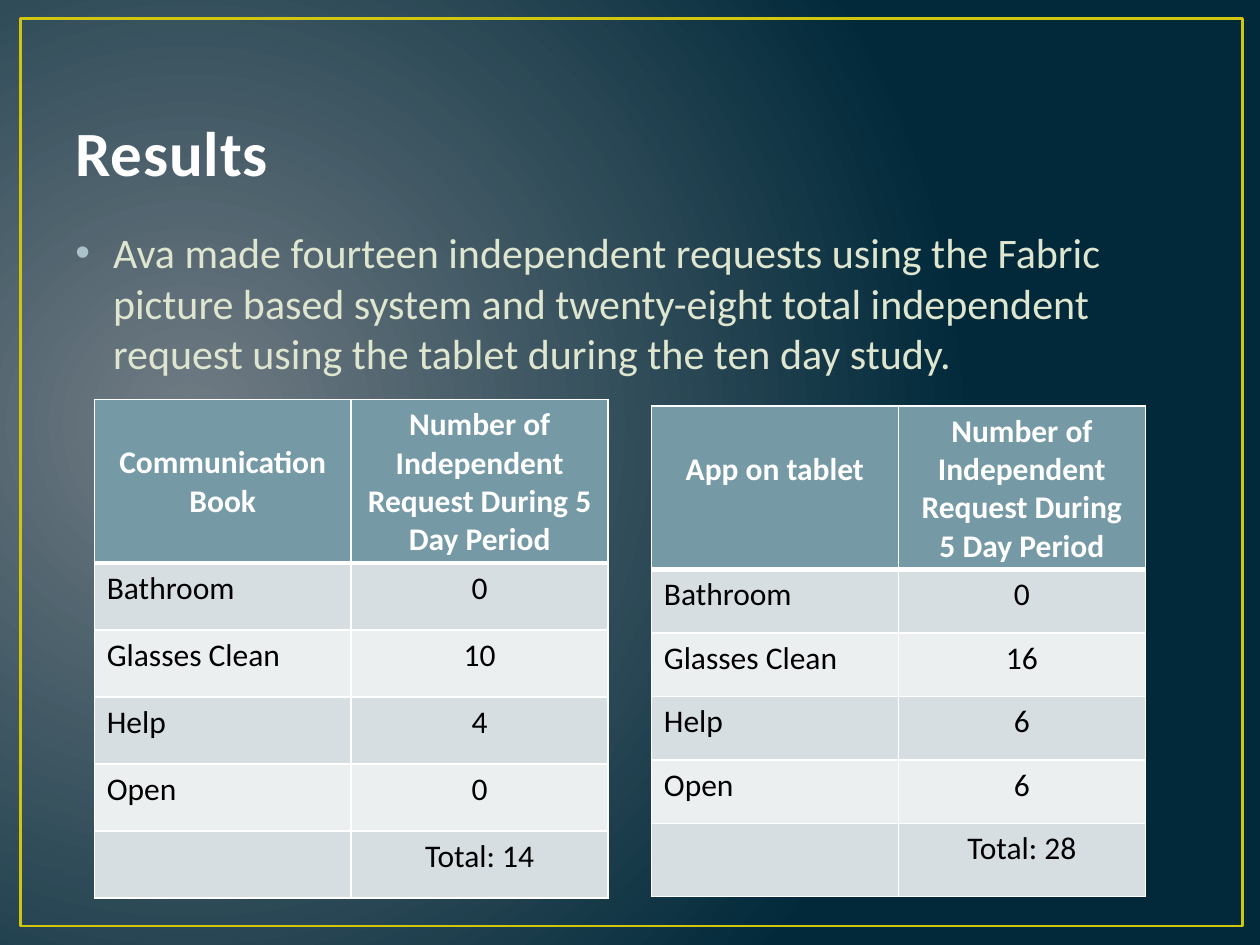
from lxml import etree
from pptx import Presentation
from pptx.dml.color import RGBColor
from pptx.enum.shapes import MSO_SHAPE
from pptx.enum.text import MSO_ANCHOR, PP_ALIGN
from pptx.oxml.ns import qn
from pptx.util import Cm, Pt

RECTANGLE = MSO_SHAPE.RECTANGLE
TOP, BOTTOM = MSO_ANCHOR.TOP, MSO_ANCHOR.BOTTOM
LEFT, CENTER = PP_ALIGN.LEFT, PP_ALIGN.CENTER

TITLE_FONT = {"name": "Calibri", "size": Pt(36), "bold": True}
BODY_FONT = {"name": "Calibri", "size": Pt(24), "bold": False}
HEADER_FONT = {"name": "Calibri", "size": Pt(18), "bold": True}
CELL_FONT = {"name": "Calibri", "size": Pt(18), "bold": False}

HEADER_FILL = "759AA5"
BAND_FILLS = ("D6DEE1", "ECEFF0")
BORDER_COLOR = "FFFFFF"

REQUEST_HEADER = "Number of Independent Request During 5 Day Period"
REQUESTS = ("Bathroom", "Glasses Clean", "Help", "Open")


def rgb(value):
    return RGBColor.from_string(value)


def add_element(parent, tag, **attributes):
    element = etree.SubElement(parent, qn(tag))
    for name, value in attributes.items():
        element.set(name, str(value))
    return element


def write_text(frame, text, font, color, alignment=LEFT):
    paragraph = frame.paragraphs[0]
    paragraph.alignment = alignment
    run = paragraph.add_run()
    run.text = text
    for name, value in font.items():
        setattr(run.font, name, value)
    run.font.color.rgb = rgb(color)
    return paragraph


def add_text_box(slide, box, anchor, text, font, color):
    frame = slide.shapes.add_textbox(*map(Cm, box)).text_frame
    frame.word_wrap = True
    frame.vertical_anchor = anchor
    return write_text(frame, text, font, color)


def set_background(slide):
    fill = slide.background.fill
    fill.gradient()
    stops = ((0, "717C84"), (1, "01293A"))
    for stop, (position, color) in zip(fill.gradient_stops, stops):
        stop.position = position
        stop.color.rgb = rgb(color)
    # Swap the linear direction for a circular one
    linear = slide.element.find(".//" + qn("a:lin"))
    gradient = linear.getparent()
    gradient.remove(linear)
    circle = add_element(gradient, "a:path", path="circle")
    add_element(circle, "a:fillToRect", l=15000, t=50000, r=85000, b=60000)


def add_frame(slide, box):
    frame = slide.shapes.add_shape(RECTANGLE, *map(Cm, box))
    frame.shadow.inherit = False
    frame.fill.background()
    frame.line.color.rgb = rgb("CFC60D")
    frame.line.width = Pt(1.5)


def add_title(slide, box):
    paragraph = add_text_box(slide, box, BOTTOM, "Results", TITLE_FONT, "FEFEFE")
    paragraph.runs[0].font._element.set("spc", "50")


def add_body(slide, box):
    text = ("Ava made fourteen independent requests using the Fabric picture "
            "based system and twenty-eight total independent request using "
            "the tablet during the ten day study.")
    paragraph = add_text_box(slide, box, TOP, text, BODY_FONT, "DFE6D0")
    # Hanging bullet
    properties = paragraph._p.get_or_add_pPr()
    properties.set("marL", str(Cm(0.76)))
    properties.set("indent", str(-Cm(0.76)))
    bullet_color = add_element(properties, "a:buClr")
    add_element(bullet_color, "a:srgbClr", val="ACC2C9")
    add_element(properties, "a:buFont", typeface="Arial")
    add_element(properties, "a:buChar", char="•")


def style_cell(cell, fill, top_width, bottom_width):
    # Borders come before the fill in the cell properties
    properties = cell._tc.get_or_add_tcPr()
    widths = {"a:lnL": 1, "a:lnR": 1, "a:lnT": top_width, "a:lnB": bottom_width}
    for tag, width in widths.items():
        line = add_element(properties, tag, w=Pt(width))
        solid = add_element(line, "a:solidFill")
        add_element(solid, "a:srgbClr", val=BORDER_COLOR)
    cell.fill.solid()
    cell.fill.fore_color.rgb = rgb(fill)


def add_results_table(slide, box, heights, system, counts):
    rows = [(system, REQUEST_HEADER), *zip(REQUESTS, counts),
            ("", f"Total: {sum(counts)}")]
    table = slide.shapes.add_table(len(rows), 2, *map(Cm, box)).table
    for column in table.columns:
        column.width = Cm(box[2] / 2)
    for row_index, (values, height) in enumerate(zip(rows, heights)):
        table.rows[row_index].height = Cm(height)
        is_header = row_index == 0
        fill = HEADER_FILL if is_header else BAND_FILLS[(row_index - 1) % 2]
        font = HEADER_FONT if is_header else CELL_FONT
        color = "FFFFFF" if is_header else "000000"
        for column_index, value in enumerate(values):
            cell = table.cell(row_index, column_index)
            style_cell(cell, fill, 3 if row_index == 1 else 1, 3 if is_header else 1)
            alignment = CENTER if is_header or column_index else LEFT
            if value != "":
                write_text(cell.text_frame, str(value), font, color, alignment)
    # The system name starts one line lower than its neighbour
    table.cell(0, 0).margin_top = Cm(0.9)


def main():
    presentation = Presentation()
    presentation.slide_width, presentation.slide_height = Cm(25.4), Cm(19.05)
    slide = presentation.slides.add_slide(presentation.slide_layouts[6])

    set_background(slide)
    add_frame(slide, (0.41, 0.38, 24.64, 18.29))
    add_title(slide, (1.27, 0.76, 22.86, 3.18))
    add_body(slide, (1.27, 4.45, 22.86, 12.57))
    add_results_table(slide, (1.9, 8.05, 10.36, 10.03), [2.92] + [1.35] * 5,
                      "Communication Book", (0, 10, 4, 0))
    add_results_table(slide, (13.13, 8.18, 9.96, 9.91), [3.2] + [1.28] * 4 + [1.47],
                      "App on tablet", (0, 16, 6, 6))
    presentation.save("out.pptx")


if __name__ == "__main__":
    main()
